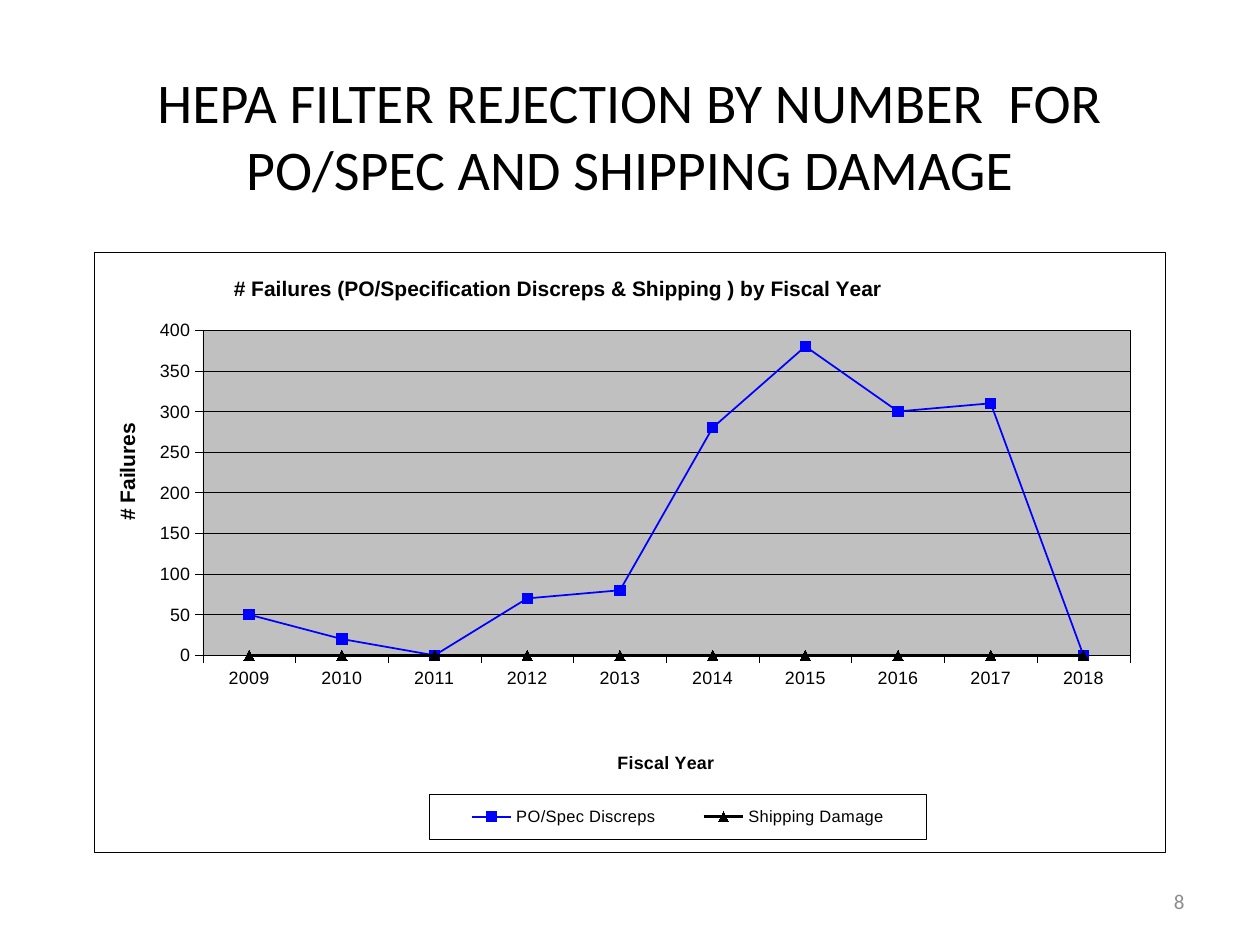
from pptx import Presentation
from pptx.chart.data import CategoryChartData as ChartData
from pptx.dml.color import RGBColor
from pptx.enum.chart import (XL_CHART_TYPE as Kind, XL_LEGEND_POSITION as Spot,
                             XL_MARKER_STYLE as Mark, XL_TICK_MARK as Tick)
from pptx.enum.text import MSO_ANCHOR as Anchor, PP_ALIGN as Align
from pptx.oxml import parse_xml
from pptx.oxml.ns import nsdecls, qn
from pptx.util import Pt

BLACK = RGBColor(0, 0, 0)
WHITE = RGBColor(255, 255, 255)
BLUE = RGBColor(0, 0, 255)
SILVER = RGBColor(0xC0, 0xC0, 0xC0)
GRAY = RGBColor(0x8C, 0x8C, 0x8C)
HAIR = 0.25

# words, box, size, colour, alignment
TEXTS = [
    ("HEPA FILTER REJECTION BY NUMBER  FOR PO/SPEC AND SHIPPING DAMAGE",
     (36, 22, 648, 110), 32, BLACK, Align.CENTER),
    ("8", (516, 500.4, 168, 28.8), 12, GRAY, Align.RIGHT),
]
FRAME = (54, 144, 612, 343)
YEARS = range(2009, 2019)
# name, values, colour, line width, marker
SERIES = [
    ("PO/Spec Discreps", (50, 20, 0, 70, 80, 280, 380, 300, 310, 0),
     BLUE, 1, Mark.SQUARE),
    ("Shipping Damage", (0,) * len(YEARS), BLACK, 2, Mark.TRIANGLE),
]
# chart parts: words, size, left and top inside the frame
HEAD = ("# Failures (PO/Specification Discreps & Shipping ) by Fiscal Year",
        12, (77.3, 11.4))
X_NAME = ("Fiscal Year", 10.2, (297, 283))
Y_NAME = ("# Failures", 12, (9, 95.5))
PLOT = (61.8, 44.6, 530, 186)
LEGEND = (191, 310, 284.6, 25.7)


def set_font(font, size, color, name="Arial", bold=False):
    for key, value in dict(size=Pt(size), name=name, bold=bold).items():
        setattr(font, key, value)
    font.color.rgb = color


def set_line(line, color, width):
    line.color.rgb = color
    line.width = Pt(width)


def place(node, index, spots, inner=False):
    """Give a chart part a manual layout, from points inside the frame."""
    for old in node.findall(qn("c:layout")):
        node.remove(old)
    rows = '<c:layoutTarget val="inner"/>' if inner else ""
    rows += "".join(f'<c:{key}Mode val="edge"/>' for key in "xy")
    rows += "".join(f'<c:{key} val="{spot / full:.4f}"/>'
                    for key, spot, full in zip("xywh", spots, FRAME[2:] * 2))
    node.insert(index, parse_xml(
        f'<c:layout {nsdecls("c")}><c:manualLayout>{rows}</c:manualLayout></c:layout>'))


def box_style(fill):
    return parse_xml(
        f'<c:spPr {nsdecls("c", "a")}><a:solidFill><a:srgbClr val="{fill}"/></a:solidFill>'
        f'<a:ln w="{Pt(HAIR)}"><a:solidFill><a:srgbClr val="{BLACK}"/></a:solidFill></a:ln>'
        '</c:spPr>')


def set_title(owner, words, size, spots):
    """Title a chart or an axis."""
    owner.has_title = True
    title = getattr(owner, "chart_title", None) or owner.axis_title
    title.text_frame.text = words
    set_font(title.text_frame.paragraphs[0].runs[0].font, size, BLACK, bold=True)
    place(title._element, 1, spots)


def add_text(slide, words, box, size, color, align):
    frame = slide.shapes.add_textbox(*map(Pt, box)).text_frame
    frame.word_wrap = True
    frame.vertical_anchor = Anchor.MIDDLE
    para = frame.paragraphs[0]
    para.alignment = align
    run = para.add_run()
    run.text = words
    set_font(run.font, size, color, "Calibri")


def add_chart(slide):
    data = ChartData()
    data.categories = [str(year) for year in YEARS]
    for name, values, *_ in SERIES:
        data.add_series(name, values)
    chart = slide.shapes.add_chart(Kind.LINE_MARKERS, *map(Pt, FRAME), data).chart
    set_font(chart.font, 10.2, BLACK)
    set_title(chart, *HEAD)

    for axis, name in ((chart.category_axis, X_NAME), (chart.value_axis, Y_NAME)):
        set_title(axis, *name)
        axis.major_tick_mark, axis.minor_tick_mark = Tick.OUTSIDE, Tick.NONE
        set_line(axis.format.line, BLACK, HAIR)
        set_font(axis.tick_labels.font, 10.2, BLACK)
    scale = chart.value_axis
    for key, value in dict(minimum_scale=0, maximum_scale=400, major_unit=50,
                           has_major_gridlines=True).items():
        setattr(scale, key, value)
    set_line(scale.major_gridlines.format.line, BLACK, HAIR)

    plot = chart.plots[0]
    plot.vary_by_categories = False
    for line, (_, _, color, width, mark) in zip(plot.series, SERIES):
        line.smooth = False
        set_line(line.format.line, color, width)
        line.marker.style, line.marker.size = mark, 6
        line.marker.format.fill.solid()
        line.marker.format.fill.fore_color.rgb = color
        set_line(line.marker.format.line, color, HAIR)

    chart.has_legend = True
    legend = chart.legend
    legend.position = Spot.BOTTOM
    legend.include_in_layout = False
    set_font(legend.font, 9.4, BLACK)
    place(legend._element, 1, LEGEND)
    legend._element.find(qn("c:overlay")).addnext(box_style(WHITE))

    body = chart._chartSpace.find(qn("c:chart"))
    body.addnext(box_style(WHITE))
    area = body.find(qn("c:plotArea"))
    place(area, 0, PLOT, inner=True)
    area.append(box_style(SILVER))


def main():
    deck = Presentation()
    deck.slide_width, deck.slide_height = Pt(720), Pt(540)
    slide = deck.slides.add_slide(deck.slide_layouts[6])
    for text in TEXTS:
        add_text(slide, *text)
    add_chart(slide)
    deck.save("out.pptx")


if __name__ == "__main__":
    main()
